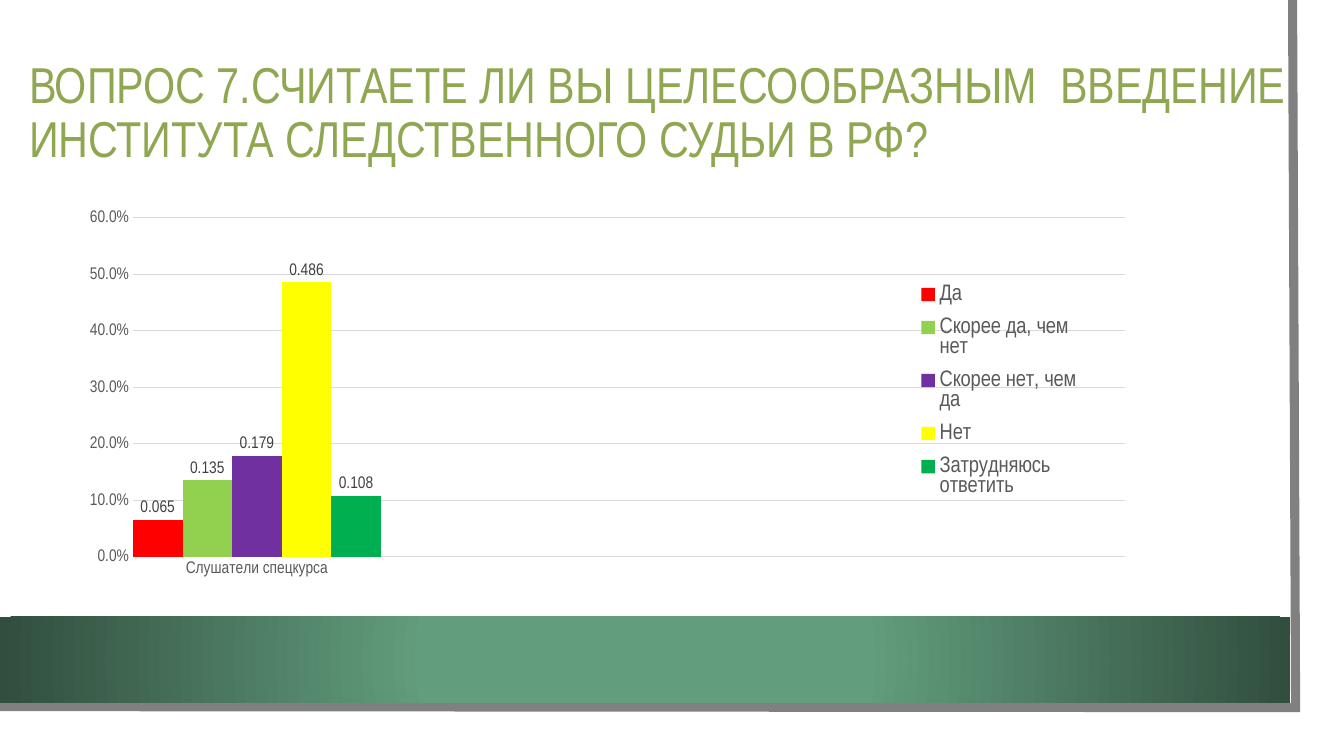
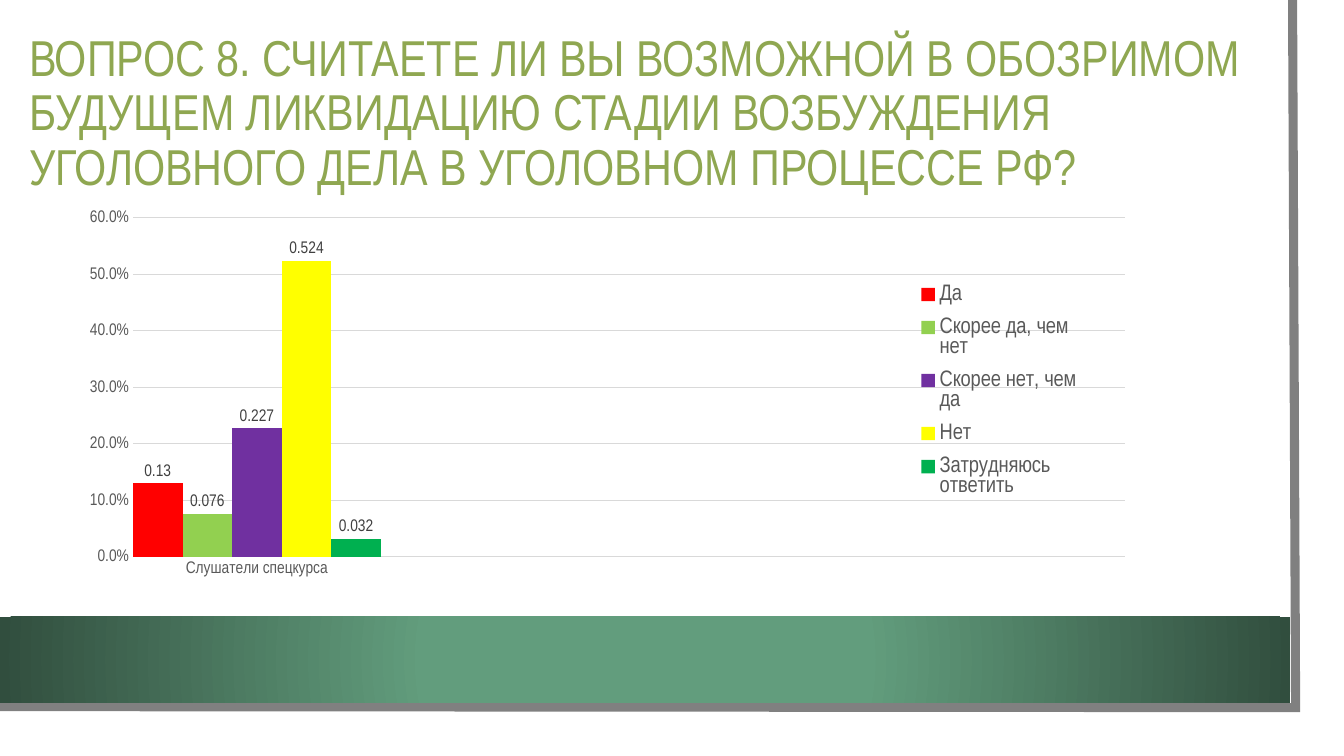
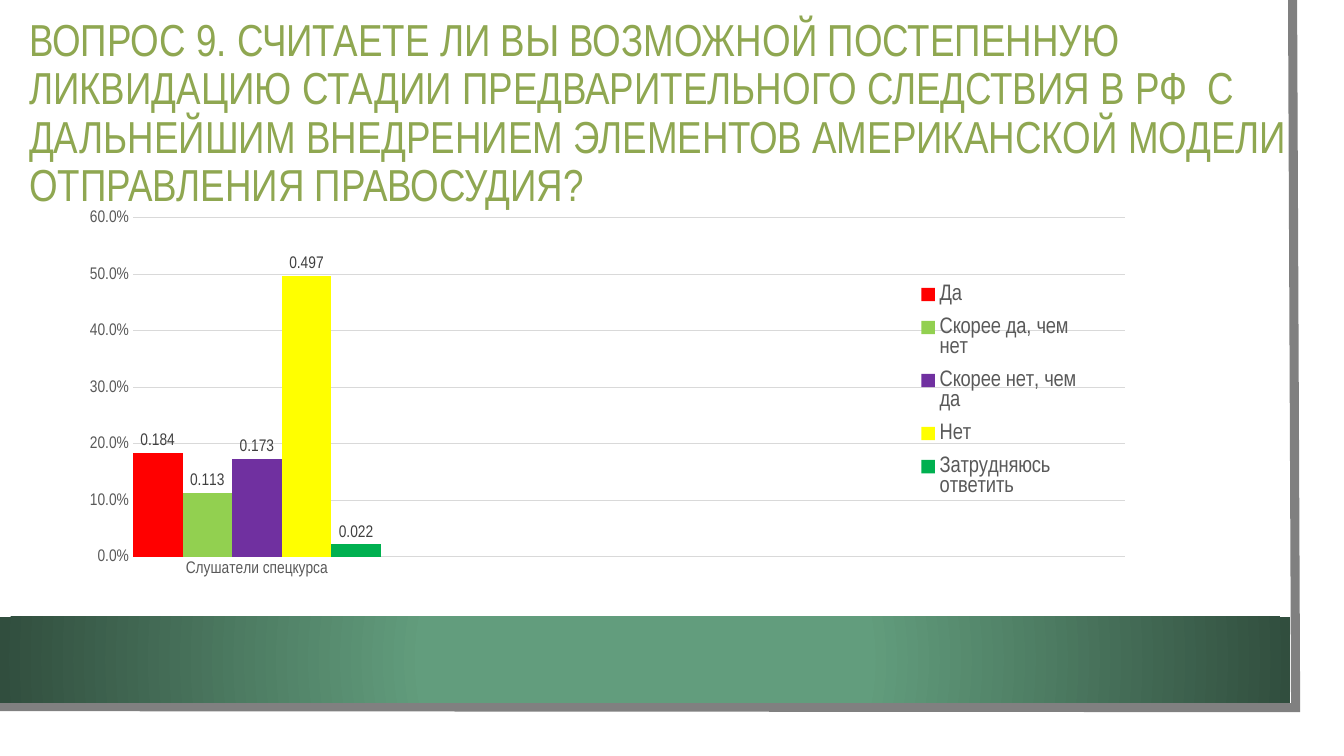
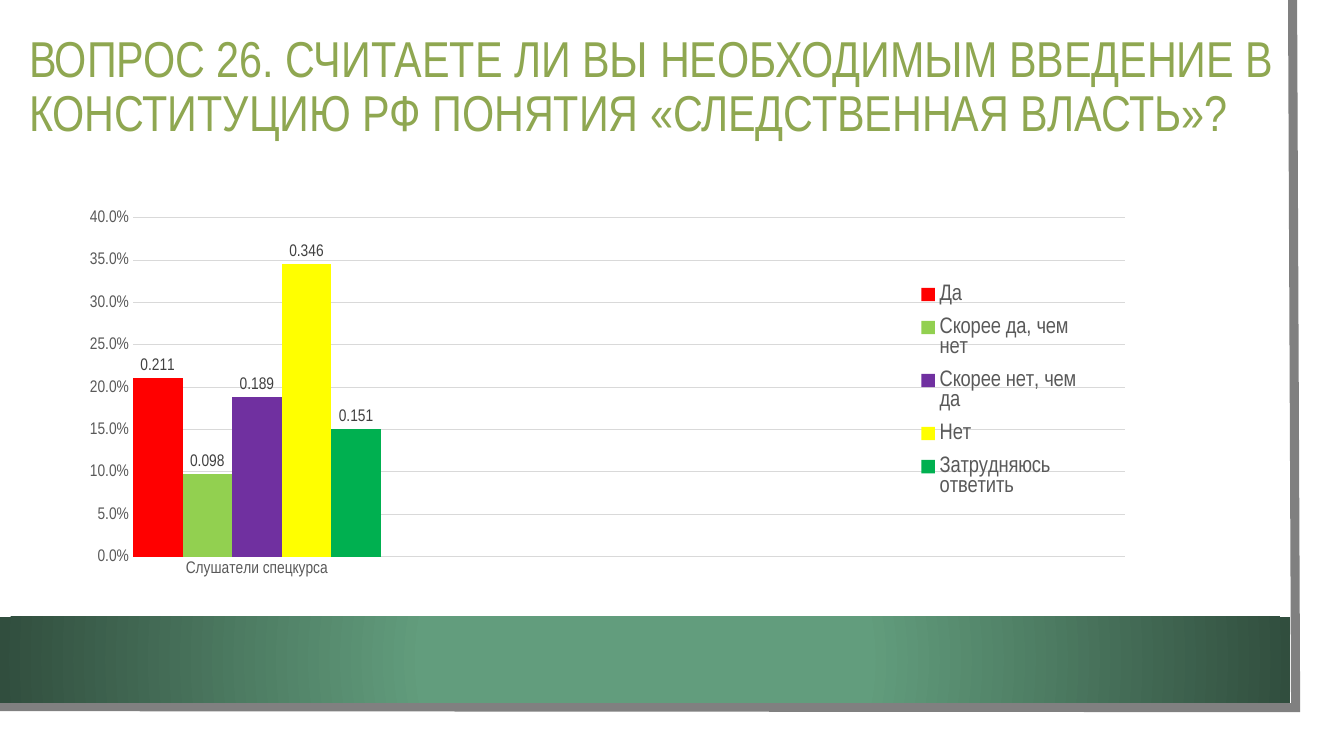
from lxml import etree
from pptx import Presentation
from pptx.chart.data import CategoryChartData
from pptx.dml.color import RGBColor
from pptx.enum.chart import (XL_CHART_TYPE as ChartType, XL_LABEL_POSITION as LabelPos,
                             XL_LEGEND_POSITION as LegendPos, XL_TICK_MARK as Tick)
from pptx.enum.shapes import MSO_SHAPE as Preset
from pptx.enum.text import MSO_ANCHOR as Anchor
from pptx.oxml.ns import qn
from pptx.util import Pt

# Content
ANSWERS = [
    ("Да", "FF0000"),
    ("Скорее да, чем нет", "92D050"),
    ("Скорее нет, чем да", "7030A0"),
    ("Нет", "FFFF00"),
    ("Затрудняюсь ответить", "00B050"),
]
GROUPS = ["Слушатели спецкурса", "", "", ""]
QUESTIONS = [
    dict(title="ВОПРОС 7.СЧИТАЕТЕ ЛИ ВЫ ЦЕЛЕСООБРАЗНЫМ  ВВЕДЕНИЕ "
               "ИНСТИТУТА СЛЕДСТВЕННОГО СУДЬИ В РФ?",
         shares=[0.065, 0.135, 0.179, 0.486, 0.108]),
    dict(title="ВОПРОС 8. СЧИТАЕТЕ ЛИ ВЫ ВОЗМОЖНОЙ В ОБОЗРИМОМ БУДУЩЕМ ЛИКВИДАЦИЮ "
               "СТАДИИ ВОЗБУЖДЕНИЯ УГОЛОВНОГО ДЕЛА В УГОЛОВНОМ ПРОЦЕССЕ РФ?",
         shares=[0.13, 0.076, 0.227, 0.524, 0.032]),
    dict(title="ВОПРОС 9. СЧИТАЕТЕ ЛИ ВЫ ВОЗМОЖНОЙ ПОСТЕПЕННУЮ ЛИКВИДАЦИЮ СТАДИИ "
               "ПРЕДВАРИТЕЛЬНОГО СЛЕДСТВИЯ В РФ  С ДАЛЬНЕЙШИМ ВНЕДРЕНИЕМ ЭЛЕМЕНТОВ "
               "АМЕРИКАНСКОЙ МОДЕЛИ ОТПРАВЛЕНИЯ ПРАВОСУДИЯ?",
         title_size=32, shares=[0.184, 0.113, 0.173, 0.497, 0.022]),
    dict(title="ВОПРОС 26. СЧИТАЕТЕ ЛИ ВЫ НЕОБХОДИМЫМ ВВЕДЕНИЕ В КОНСТИТУЦИЮ РФ "
               "ПОНЯТИЯ «СЛЕДСТВЕННАЯ ВЛАСТЬ»?",
         title_height=133, top=0.4, step=0.05,
         shares=[0.211, 0.098, 0.189, 0.346, 0.151]),
]

# Shared style; lengths in px, 100 to the inch
PX = 9144
FONT = "Arial Narrow"
TITLE, AXIS, LABEL, GRID = "8FA751", "595959", "404040", "D9D9D9"
FRAME, BAND_MID, BAND_EDGE = "808080", "629D7D", "314E3E"
FRAME_POINTS = [(1282, 0), (1285, 702), (-3, 701)]
BAND_BOX = (0, 612, 1280, 85)
CHART_BOX = (72, 206, 1050, 422)
PLOT_AREA = dict(x=0.057, y=0.024, w=0.937, h=0.797)
LEGEND_AREA = dict(x=0.79, y=0.15, w=0.17, h=0.56)


def emu(box):
    return [length * PX for length in box]


def color(hex_text):
    return RGBColor.from_string(hex_text)


def set_font(font, size, hex_text):
    font.name, font.size, font.bold = FONT, Pt(size), False
    font.color.rgb = color(hex_text)


def set_line(line, hex_text, width):
    line.color.rgb = color(hex_text)
    line.width = Pt(width)


def add_text(slide, text, box, size=36, hex_text=TITLE, anchor=Anchor.MIDDLE, spacing=0.9):
    frame = slide.shapes.add_textbox(*emu(box)).text_frame
    frame.word_wrap = True
    frame.vertical_anchor = anchor
    paragraph = frame.paragraphs[0]
    paragraph.line_spacing = spacing
    run = paragraph.add_run()
    run.text = text
    set_font(run.font, size, hex_text)


def add_frame(slide):
    start, *rest = FRAME_POINTS
    builder = slide.shapes.build_freeform(*start, scale=PX)
    builder.add_line_segments(rest, close=False)
    frame = builder.convert_to_shape()
    frame.shadow.inherit = False
    frame.fill.background()
    set_line(frame.line, FRAME, 6.5)
    outline = frame._element.spPr.find(qn("a:ln"))
    etree.SubElement(outline, qn("a:miter"), lim="800000")


def add_band(slide):
    band = slide.shapes.add_shape(Preset.RECTANGLE, *emu(BAND_BOX))
    band.shadow.inherit = False
    band.line.fill.background()
    band.fill.gradient()
    stops = zip(band.fill.gradient_stops, [(0.34, BAND_MID), (1, BAND_EDGE)])
    for stop, (position, hex_text) in stops:
        stop.position = position
        stop.color.rgb = color(hex_text)
    # Radial gradient from the centre
    gradient = band._element.spPr.find(qn("a:gradFill"))
    gradient.remove(gradient.find(qn("a:lin")))
    radial = etree.SubElement(gradient, qn("a:path"), path="circle")
    etree.SubElement(radial, qn("a:fillToRect"), l="50000", t="50000", r="50000", b="50000")


def place(part, index, area, inner=False):
    """Give a chart part a fixed place, in fractions of the chart."""
    for old in part.findall(qn("c:layout")):
        part.remove(old)
    layout = etree.Element(qn("c:layout"))
    manual = etree.SubElement(layout, qn("c:manualLayout"))
    if inner:
        etree.SubElement(manual, qn("c:layoutTarget"), val="inner")
    for side in "xy":
        etree.SubElement(manual, qn(f"c:{side}Mode"), val="edge")
    for side, fraction in area.items():
        etree.SubElement(manual, qn(f"c:{side}"), val=str(fraction))
    part.insert(index, layout)


def add_answers_chart(slide, shares, top, step):
    answers = CategoryChartData()
    answers.categories = GROUPS
    for (name, _), share in zip(ANSWERS, shares):
        answers.add_series(name, [share] + [None] * (len(GROUPS) - 1))
    chart = slide.shapes.add_chart(ChartType.COLUMN_CLUSTERED, *emu(CHART_BOX), answers).chart
    chart.has_title = False
    set_font(chart.font, 10, "000000")

    # Columns and their labels
    plot = chart.plots[0]
    plot.gap_width = plot.overlap = 0
    plot.vary_by_categories = False
    for series, (_, hex_text) in zip(plot.series, ANSWERS):
        series.format.fill.solid()
        series.format.fill.fore_color.rgb = color(hex_text)
        labels = series.data_labels
        labels.show_value = True
        labels.position = LabelPos.OUTSIDE_END
        labels.number_format, labels.number_format_is_linked = "General", False
        set_font(labels.font, 12, LABEL)

    # Axes
    groups, scale = chart.category_axis, chart.value_axis
    for axis in (groups, scale):
        axis.major_tick_mark = axis.minor_tick_mark = Tick.NONE
        set_font(axis.tick_labels.font, 12, AXIS)
    set_line(groups.format.line, GRID, 1)
    scale.format.line.fill.background()
    set_line(scale.major_gridlines.format.line, GRID, 0.75)
    scale.minimum_scale, scale.maximum_scale, scale.major_unit = 0, top, step
    scale.tick_labels.number_format = "0.0%"
    scale.tick_labels.number_format_is_linked = False

    # Legend over the empty part of the plot
    chart.has_legend = True
    chart.legend.position = LegendPos.RIGHT
    chart.legend.include_in_layout = True
    set_font(chart.legend.font, 16, AXIS)
    place(chart._chartSpace.find(".//" + qn("c:plotArea")), 0, PLOT_AREA, inner=True)
    place(chart._chartSpace.find(".//" + qn("c:legend")), 1, LEGEND_AREA)


def add_question(deck, title, shares, title_size=36, title_height=185, top=0.6, step=0.1):
    slide = deck.slides.add_slide(deck.slide_layouts[6])
    add_frame(slide)
    add_band(slide)
    add_text(slide, title, (19, 21, 1271, title_height), size=title_size)
    add_answers_chart(slide, shares, top, step)


def main():
    deck = Presentation()
    deck.slide_width, deck.slide_height = emu((1333, 750))
    for question in QUESTIONS:
        add_question(deck, **question)
    deck.save("out.pptx")


if __name__ == "__main__":
    main()
